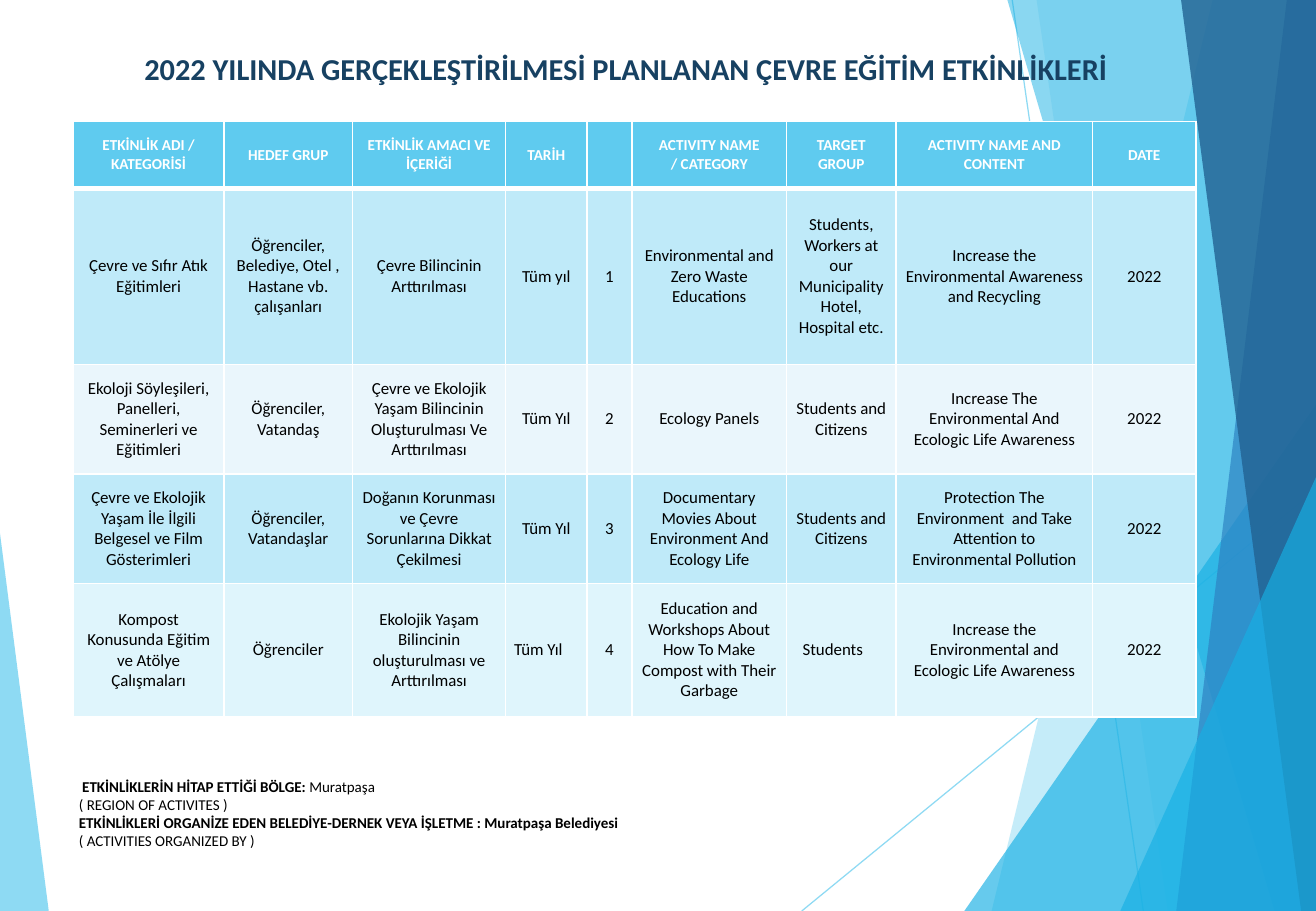
from dataclasses import dataclass

from lxml import etree
from pptx import Presentation
from pptx.dml.color import RGBColor
from pptx.enum.shapes import MSO_CONNECTOR, MSO_SHAPE
from pptx.enum.text import MSO_ANCHOR, PP_ALIGN
from pptx.oxml.ns import qn
from pptx.util import Cm, Pt

STRAIGHT = MSO_CONNECTOR.STRAIGHT
TRIANGLE = MSO_SHAPE.ISOSCELES_TRIANGLE
MIDDLE = MSO_ANCHOR.MIDDLE
CENTER, LEFT = PP_ALIGN.CENTER, PP_ALIGN.LEFT

WIDTH, HEIGHT = 27.51, 19.05


@dataclass(frozen=True)
class Theme:
    """Colours, font and type sizes of the slide."""
    font: str = "Calibri"
    sky: str = "5FCBEF"
    cyan: str = "17B0E4"
    blue: str = "2E83C3"
    navy: str = "226292"
    heading: str = "174162"
    white: str = "FFFFFF"
    black: str = "000000"
    row_fills: tuple = ("5FCBEF", "BFEAF9", "EAF6FC", "BFEAF9", "DFF5FC")
    title_size: float = 18
    header_size: float = 9
    body_size: float = 10
    note_size: float = 8.9


def write(paragraph, text, *, font, size, color, bold=False, align=LEFT):
    """Append formatted text to a paragraph."""
    paragraph.alignment = align
    run = paragraph.add_run()
    run.text = text
    run.font.name = font
    run.font.size = Pt(size)
    run.font.bold = bold
    run.font.color.rgb = RGBColor.from_string(color)


def set_opacity(element, percent):
    """Make the colour of a shape or line translucent."""
    color = element.spPr.find(".//" + qn("a:srgbClr"))
    etree.SubElement(color, qn("a:alpha"), val=str(percent * 1000))


class ActivitySlide:
    """Draws the elements of one slide in a shared theme."""

    def __init__(self, slide, theme):
        """Keep the slide and its theme."""
        self.shapes = slide.shapes
        self.theme = theme

    def line(self, start, end, color, opacity):
        """Draw a thin translucent line."""
        ray = self.shapes.add_connector(STRAIGHT, *map(Cm, start + end))
        ray.line.width = Pt(0.75)
        ray.line.color.rgb = RGBColor.from_string(color)
        set_opacity(ray._element, opacity)
        etree.SubElement(ray._element.spPr, qn("a:effectLst"))

    def paint(self, facet, color, opacity):
        """Give a facet a translucent fill without outline or shadow."""
        facet.fill.solid()
        facet.fill.fore_color.rgb = RGBColor.from_string(color)
        set_opacity(facet._element, opacity)
        facet.line.fill.background()
        facet.shadow.inherit = False

    def band(self, top_x, bottom_x, color, opacity):
        """Draw a slanted band reaching to the right edge of the slide."""
        outline = self.shapes.build_freeform(Cm(top_x), 0)
        corners = [(WIDTH, 0), (WIDTH, HEIGHT), (bottom_x, HEIGHT)]
        outline.add_line_segments([(Cm(x), Cm(y)) for x, y in corners], close=True)
        self.paint(outline.convert_to_shape(), color, opacity)

    def triangle(self, left, top, width, apex, color, opacity):
        """Draw a triangle standing on the bottom edge of the slide."""
        facet = self.shapes.add_shape(
            TRIANGLE, Cm(left), Cm(top), Cm(width), Cm(HEIGHT - top))
        facet.adjustments[0] = apex
        self.paint(facet, color, opacity)

    def text(self, box, paragraphs, *, size, color, align=LEFT):
        """Place a text box whose paragraphs are lists of (text, bold) pairs."""
        frame = self.shapes.add_textbox(*map(Cm, box)).text_frame
        frame.word_wrap = True
        for index, runs in enumerate(paragraphs):
            paragraph = frame.add_paragraph() if index else frame.paragraphs[0]
            for content, bold in runs:
                write(paragraph, content, font=self.theme.font, size=size,
                      color=color, bold=bold, align=align)

    def borders(self, cell, top, bottom):
        """Set the white borders of a cell, widths in points."""
        properties = cell._tc.get_or_add_tcPr()
        widths = {"a:lnL": 1, "a:lnR": 1, "a:lnT": top, "a:lnB": bottom}
        for index, (side, width) in enumerate(widths.items()):
            edge = etree.Element(qn(side), w=str(Pt(width)))
            fill = etree.SubElement(edge, qn("a:solidFill"))
            etree.SubElement(fill, qn("a:srgbClr"), val=self.theme.white)
            properties.insert(index, edge)

    def cell(self, cell, content, row, align, indent):
        """Fill and format one cell of the table."""
        theme, header = self.theme, row == 0
        cell.fill.solid()
        cell.fill.fore_color.rgb = RGBColor.from_string(theme.row_fills[row])
        cell.vertical_anchor = MIDDLE
        cell.margin_left, cell.margin_right = Cm(0.18 + indent), Cm(0.18)
        cell.margin_top = cell.margin_bottom = Cm(0.1)
        for index, part in enumerate(content.split("\n")):
            frame = cell.text_frame
            paragraph = frame.add_paragraph() if index else frame.paragraphs[0]
            write(paragraph, part, font=theme.font, bold=header, align=align,
                  size=theme.header_size if header else theme.body_size,
                  color=theme.white if header else theme.black)
        self.borders(cell, top=3 if row == 1 else 1, bottom=3 if header else 1)

    def table(self, left, top, widths, heights, rows, left_indents):
        """Draw the table; left_indents maps left-aligned cells to indents."""
        grid = self.shapes.add_table(
            len(heights), len(widths), Cm(left), Cm(top),
            Cm(sum(widths)), Cm(sum(heights))).table
        grid.horz_banding = False
        for column, width in zip(grid.columns, widths):
            column.width = Cm(width)
        for row, (height, contents) in enumerate(zip(heights, rows)):
            grid.rows[row].height = Cm(height)
            for column, content in enumerate(contents):
                place = (row, column)
                align = LEFT if place in left_indents else CENTER
                self.cell(grid.cell(row, column), content, row, align,
                          left_indents.get(place, 0))


ACTIVITIES = [
    ["ETKİNLİK ADI / KATEGORİSİ", "HEDEF GRUP", "ETKİNLİK AMACI VE İÇERİĞİ",
     "TARİH", "", "ACTIVITY NAME\n/ CATEGORY", "TARGET GROUP",
     "ACTIVITY NAME AND CONTENT", "DATE"],
    ["Çevre ve Sıfır Atık Eğitimleri",
     "Öğrenciler, Belediye, Otel , Hastane vb. çalışanları",
     "Çevre Bilincinin Arttırılması", "Tüm yıl", "1",
     "Environmental and Zero Waste\nEducations",
     "Students, Workers at our Municipality Hotel, Hospital etc.",
     "Increase the Environmental Awareness and Recycling", "2022"],
    ["Ekoloji Söyleşileri, Panelleri, Seminerleri ve Eğitimleri",
     "Öğrenciler, Vatandaş",
     "Çevre ve Ekolojik Yaşam Bilincinin Oluşturulması Ve Arttırılması",
     "Tüm Yıl", "2", "Ecology Panels", "Students and Citizens",
     "Increase The Environmental And Ecologic Life Awareness", "2022"],
    ["Çevre ve Ekolojik Yaşam İle İlgili Belgesel ve Film Gösterimleri",
     "Öğrenciler, Vatandaşlar",
     "Doğanın Korunması ve Çevre Sorunlarına Dikkat Çekilmesi",
     "Tüm Yıl", "3", "Documentary Movies About Environment And Ecology Life",
     "Students and Citizens",
     "Protection The Environment  and Take Attention to Environmental Pollution",
     "2022"],
    ["Kompost Konusunda Eğitim ve Atölye Çalışmaları", "Öğrenciler",
     "Ekolojik Yaşam Bilincinin oluşturulması ve Arttırılması", "Tüm Yıl", "4",
     "Education and Workshops About How To Make Compost with Their Garbage",
     "Students", "Increase the Environmental and Ecologic Life Awareness", "2022"],
]


def main():
    """Build the slide of planned activities and save it."""
    theme = Theme()
    deck = Presentation()
    deck.slide_width, deck.slide_height = Cm(WIDTH), Cm(HEIGHT)
    page = ActivitySlide(deck.slides.add_slide(deck.slide_layouts[6]), theme)

    page.line((21.16, 0), (23.9, HEIGHT), theme.sky, 70)
    page.line((WIDTH, 10.24), (16.76, HEIGHT), theme.sky, 70)
    page.band(25.35, 20.73, theme.sky, 36)
    page.band(21.67, 24.41, theme.sky, 20)
    page.triangle(20.16, 8.46, 7.35, 1, theme.cyan, 66)
    page.band(21.06, 26.64, theme.cyan, 50)
    page.band(26.9, 24.59, theme.blue, 70)
    page.band(24.69, 27.2, theme.navy, 80)
    page.triangle(23.42, 9.98, 4.09, 1, theme.cyan, 66)
    page.triangle(0, 11.15, 1.02, 0, theme.sky, 70)

    page.text(
        (1.47, 0.93, 23.24, 1.22),
        [[("2022 YILINDA GERÇEKLEŞTİRİLMESİ PLANLANAN ÇEVRE EĞİTİM ETKİNLİKLERİ", True)]],
        size=theme.title_size, color=theme.heading, align=CENTER)
    page.text(
        (1.4, 16.13, 23.85, 1.78),
        [[(" ETKİNLİKLERİN HİTAP ETTİĞİ BÖLGE: ", True), ("Muratpaşa", False)],
         [("( REGION OF ACTIVITES )", False)],
         [("ETKİNLİKLERİ ORGANİZE EDEN BELEDİYE-DERNEK VEYA İŞLETME : "
           "Muratpaşa Belediyesi", True)],
         [("( ACTIVITIES ORGANIZED BY )", False)]],
        size=theme.note_size, color=theme.black)
    page.table(
        1.53, 2.54,
        widths=[3.15, 2.69, 3.2, 1.7, 0.94, 3.23, 2.29, 4.11, 2.16],
        heights=[1.4, 3.68, 2.29, 2.29, 2.79],
        rows=ACTIVITIES, left_indents={(4, 3): 0, (4, 6): 0.16})
    deck.save("out.pptx")


if __name__ == "__main__":
    main()
